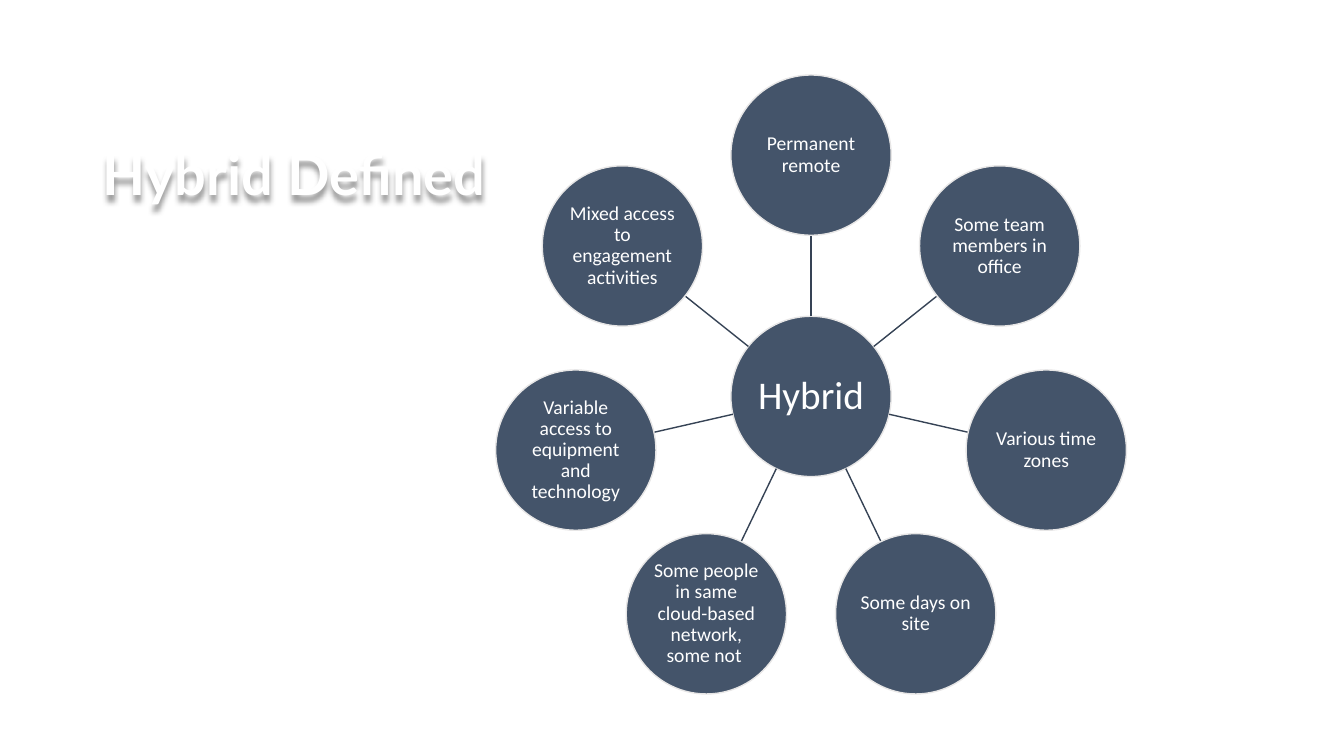
"""Build a slide that defines hybrid work with a hub and seven spokes."""
import math
from dataclasses import dataclass

import pptx
import pptx.dml.color
import pptx.enum.shapes
import pptx.enum.text
import pptx.oxml
import pptx.oxml.ns
import pptx.slide
import pptx.text.text
import pptx.util

Cm = pptx.util.Cm
Pt = pptx.util.Pt
RGBColor = pptx.dml.color.RGBColor
Align = pptx.enum.text.PP_ALIGN
Anchor = pptx.enum.text.MSO_ANCHOR

WHITE = RGBColor(0xFF, 0xFF, 0xFF)
SLATE = RGBColor(0x44, 0x54, 0x6A)
NAVY = RGBColor(0x36, 0x43, 0x55)
PALE = RGBColor(0xE7, 0xE6, 0xE6)

HUB_X, HUB_Y = 20.44, 9.99
ORBIT = 6.08
DISC = 4.04

SPOKES = (
    "Permanent remote",
    "Some team members in office",
    "Various time zones",
    "Some days on site",
    "Some people in same cloud-based network, some not ",
    "Variable access to equipment and technology",
    "Mixed access to engagement activities",
)


@dataclass
class Disc:
    text: str
    x: float
    y: float
    size: int = 14
    inset: float = 0.03


def write(frame: pptx.text.text.TextFrame, text: str, *, size: int, font: str,
          bold: bool = False, align: Align = Align.CENTER,
          anchor: Anchor = Anchor.MIDDLE) -> None:
    frame.word_wrap = True
    frame.auto_size = pptx.enum.text.MSO_AUTO_SIZE.NONE
    frame.vertical_anchor = anchor
    para = frame.paragraphs[0]
    para.alignment = align
    para.line_spacing = 0.9
    run = para.add_run()
    run.text = text
    run.font.size = Pt(size)
    run.font.name = font
    run.font.bold = bold
    run.font.color.rgb = WHITE


def add_disc(slide: pptx.slide.Slide, disc: Disc) -> None:
    shape = slide.shapes.add_shape(
        pptx.enum.shapes.MSO_SHAPE.OVAL,
        Cm(disc.x - DISC / 2), Cm(disc.y - DISC / 2), Cm(DISC), Cm(DISC))
    shape.shadow.inherit = False
    shape.fill.solid()
    shape.fill.fore_color.rgb = SLATE
    shape.line.color.rgb = PALE
    shape.line.width = Pt(1)
    frame = shape.text_frame
    frame.margin_left = frame.margin_right = Cm(disc.inset)
    frame.margin_top = frame.margin_bottom = Cm(disc.inset)
    write(frame, disc.text, size=disc.size, font="Calibri")


def place(reach: float, angle: float) -> tuple[float, float]:
    return HUB_X + reach * math.sin(angle), HUB_Y - reach * math.cos(angle)


def add_spoke(slide: pptx.slide.Slide, angle: float) -> None:
    x1, y1 = place(DISC / 2, angle)
    x2, y2 = place(ORBIT - DISC / 2, angle)
    line = slide.shapes.add_connector(
        pptx.enum.shapes.MSO_CONNECTOR.STRAIGHT, Cm(x1), Cm(y1), Cm(x2), Cm(y2))
    line.line.color.rgb = NAVY
    line.line.width = Pt(1)
    effects = pptx.oxml.parse_xml(
        f"<a:effectLst {pptx.oxml.ns.nsdecls('a')}/>")
    line._element.spPr.append(effects)


def add_title(slide: pptx.slide.Slide) -> None:
    title = slide.shapes.title
    title.left, title.top = Cm(2.34), Cm(3.58)
    title.width, title.height = Cm(29.21), Cm(1.42)
    write(title.text_frame, "Hybrid Defined", size=40, font="Lato", bold=True,
          align=Align.LEFT, anchor=Anchor.TOP)
    title.fill.background()
    shadow = pptx.oxml.parse_xml(
        f"<a:effectLst {pptx.oxml.ns.nsdecls('a')}>"
        '<a:outerShdw blurRad="50800" dist="50800" dir="5400000">'
        '<a:srgbClr val="000000"><a:alpha val="40000"/></a:srgbClr>'
        "</a:outerShdw></a:effectLst>")
    title._element.spPr.append(shadow)


def main() -> None:
    deck = pptx.Presentation()
    deck.slide_width, deck.slide_height = Cm(33.87), Cm(19.05)
    slide = deck.slides.add_slide(deck.slide_layouts[5])
    slide.background.fill.solid()
    slide.background.fill.fore_color.rgb = WHITE
    add_title(slide)
    add_disc(slide, Disc("Hybrid", HUB_X, HUB_Y, size=28, inset=0.05))
    for i, text in enumerate(SPOKES):
        angle = math.tau * i / len(SPOKES)
        add_spoke(slide, angle)
        add_disc(slide, Disc(text, *place(ORBIT, angle)))
    deck.save("out.pptx")


if __name__ == "__main__":
    main()
